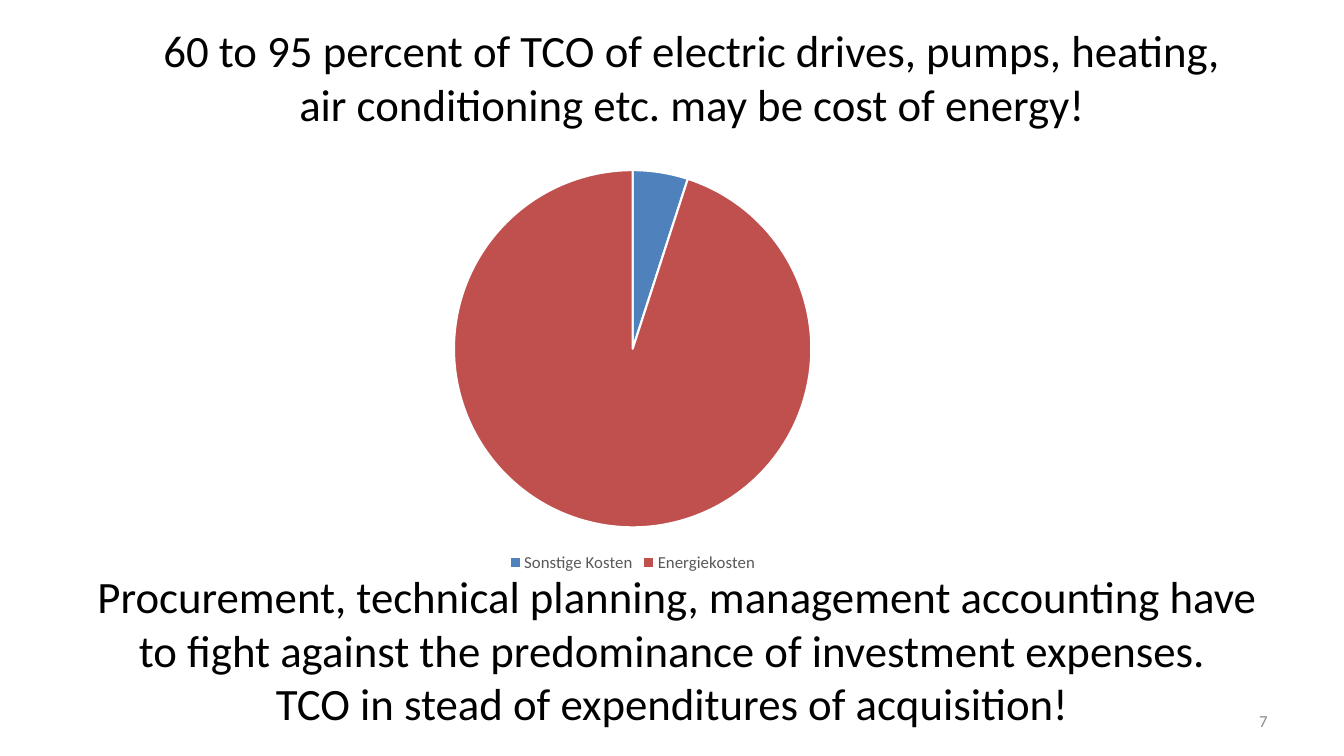
from dataclasses import dataclass

from pptx import Presentation
from pptx.chart.data import CategoryChartData as Data
from pptx.dml.color import RGBColor as Rgb
from pptx.enum.chart import XL_CHART_TYPE as Kind, XL_LEGEND_POSITION as Spot
from pptx.enum.text import MSO_ANCHOR as Anchor, PP_ALIGN as Align
from pptx.slide import Slide
from pptx.util import Inches, Pt


@dataclass(frozen=True)
class Theme:
    font: str = "Calibri"
    black: str = "000000"
    gray: str = "8C8C8C"
    label: str = "595959"
    edge: str = "FFFFFF"
    big: int = 32
    small: int = 12


@dataclass(frozen=True)
class Box:
    at: tuple[float, float, float, float]
    lines: tuple[str, ...]
    size: int
    color: str
    align: Align = Align.CENTER
    anchor: Anchor = Anchor.MIDDLE
    foot: float = 0.05


@dataclass(frozen=True)
class Slice:
    name: str
    value: int
    color: str


THEME = Theme()

BOXES = (
    # Heading
    Box((1.47, 0, 10.79, 1.86),
        ("60 to 95 percent of TCO of electric drives, pumps, heating, "
         "air conditioning etc. may be cost of energy!",),
        THEME.big, THEME.black, foot=0.39),
    # Page number
    Box((9.56, 6.95, 3.11, 0.4), ("7",), THEME.small, THEME.gray, Align.RIGHT),
    # Conclusion
    Box((0.81, 5.59, 11.82, 1.72),
        ("Procurement, technical planning, management accounting have "
         "to fight against the predominance of investment expenses. ",
         "TCO in stead of expenditures of acquisition! "),
        THEME.big, THEME.black, anchor=Anchor.TOP),
)

SLICES = (
    Slice("Sonstige Kosten", 5, "4F81BD"),
    Slice("Energiekosten", 95, "C0504D"),
)


def add_text(slide: Slide, box: Box) -> None:
    frame = slide.shapes.add_textbox(*map(Inches, box.at)).text_frame
    frame.word_wrap = True
    frame.vertical_anchor = box.anchor
    frame.margin_bottom = Inches(box.foot)
    frame.text = "\n".join(box.lines)
    for para in frame.paragraphs:
        para.alignment = box.align
        para.font.name = THEME.font
        para.font.size = Pt(box.size)
        para.font.color.rgb = Rgb.from_string(box.color)


def add_pie(slide: Slide, slices: tuple[Slice, ...]) -> None:
    data = Data()
    data.categories = [part.name for part in slices]
    data.add_series("Series 1", [part.value for part in slices])
    area = map(Inches, (2.81, 1.55, 6.93, 4.17))
    chart = slide.shapes.add_chart(Kind.PIE, *area, data).chart
    chart.has_title = False
    chart.font.name = THEME.font
    chart.font.size = Pt(THEME.small)
    chart.font.color.rgb = Rgb.from_string(THEME.label)

    # Legend below the pie
    chart.has_legend = True
    chart.legend.position = Spot.BOTTOM
    chart.legend.include_in_layout = False

    # Slice colours
    plot = chart.plots[0]
    plot.vary_by_categories = True
    for index, part in enumerate(slices):
        look = plot.series[0].points[index].format
        look.fill.solid()
        look.fill.fore_color.rgb = Rgb.from_string(part.color)
        look.line.color.rgb = Rgb.from_string(THEME.edge)
        look.line.width = Pt(1.5)


def main() -> None:
    deck = Presentation()
    deck.slide_width, deck.slide_height = Inches(13.33), Inches(7.5)
    slide = deck.slides.add_slide(deck.slide_layouts[6])
    add_pie(slide, SLICES)
    for box in BOXES:
        add_text(slide, box)
    deck.save("out.pptx")


if __name__ == "__main__":
    main()
